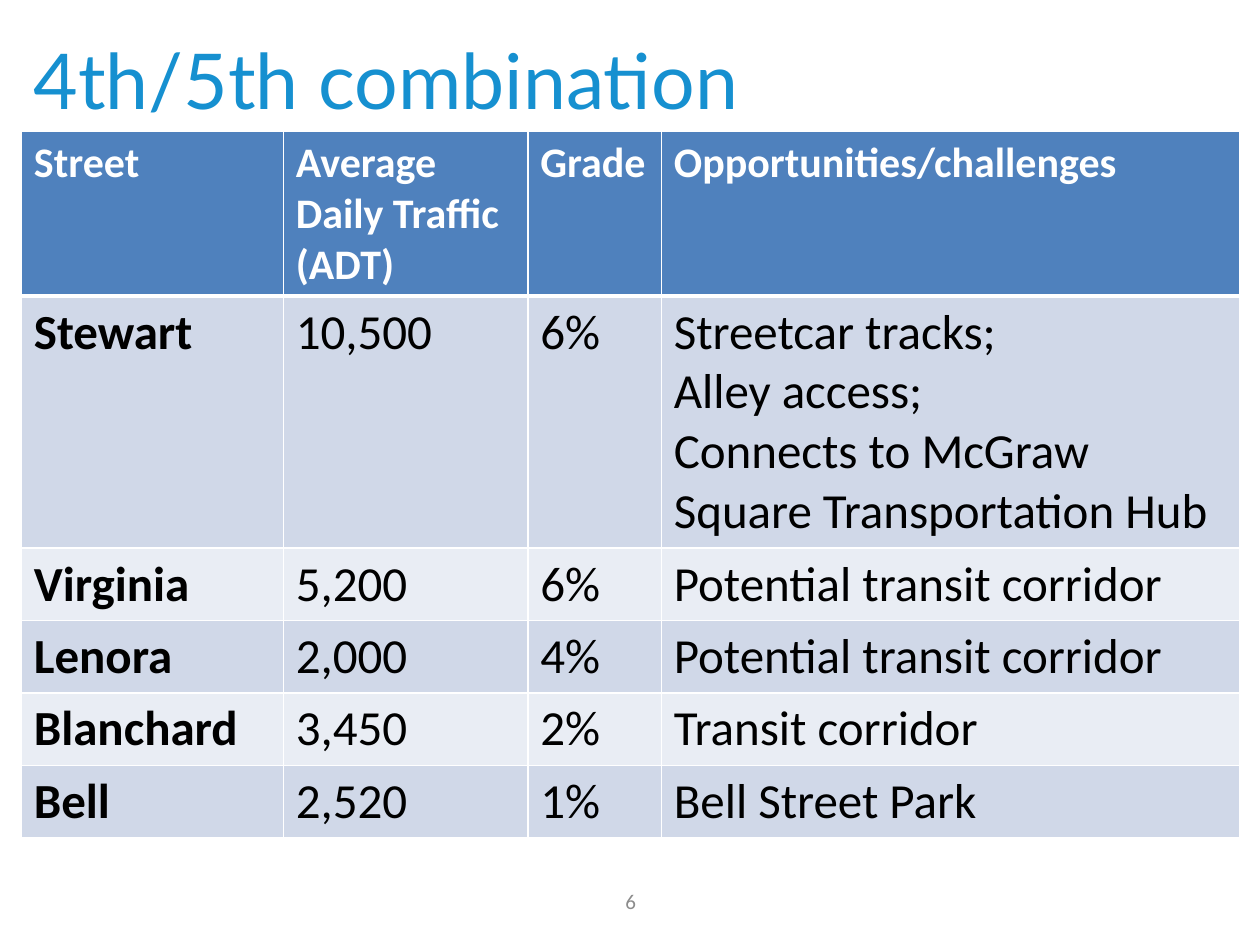
from lxml.etree import SubElement
from pptx import Presentation
from pptx.dml.color import RGBColor as Color
from pptx.enum.text import MSO_ANCHOR as Anchor, PP_ALIGN as Align
from pptx.oxml.ns import qn
from pptx.util import Cm, Pt

COLORS = {
    "title": "1690D0",
    "header": "4F81BD",
    "band_dark": "D0D8E8",
    "band_light": "E9EDF4",
    "white": "FFFFFF",
    "text": "000000",
    "number": "8C8C8C",
}
COLUMN_WIDTHS = [5.28, 4.93, 2.69, 11.66]
ROW_HEIGHTS = [3.33, 5.08] + [1.46] * 4
STREETS = [
    ["Street", "Average Daily Traffic (ADT)", "Grade", "Opportunities/challenges"],
    ["Stewart", "10,500", "6%",
     "Streetcar tracks;\nAlley access;\nConnects to McGraw Square Transportation Hub"],
    ["Virginia", "5,200", "6%", "Potential transit corridor"],
    ["Lenora", "2,000", "4%", "Potential transit corridor"],
    ["Blanchard", "3,450", "2%", "Transit corridor"],
    ["Bell", "2,520", "1%", "Bell Street Park"],
]


def style_text(frame, size, color, name="Calibri", bold=False, align=None):
    for para in frame.paragraphs:
        para.alignment = align
        para.font.size = Pt(size)
        para.font.name = name
        para.font.bold = bold
        para.font.color.rgb = Color.from_string(COLORS[color])


def add_text(page, text, left, top, width, height, **style):
    box = page.shapes.add_textbox(Cm(left), Cm(top), Cm(width), Cm(height))
    frame = box.text_frame
    frame.word_wrap = True
    frame.vertical_anchor = Anchor.MIDDLE
    frame.text = text
    style_text(frame, **style)


def add_borders(cell, top, bottom):
    properties = cell._tc.get_or_add_tcPr()
    for side, width in {"L": 1, "R": 1, "T": top, "B": bottom}.items():
        line = SubElement(properties, qn(f"a:ln{side}"), w=str(Pt(width)))
        fill = SubElement(line, qn("a:solidFill"))
        SubElement(fill, qn("a:srgbClr"), val=COLORS["white"])


def fill_cell(cell, text, row, column):
    is_header = row == 0
    # Borders come before the fill in the cell properties
    add_borders(cell, top=3 if row == 1 else 1, bottom=3 if is_header else 1)
    band = "header" if is_header else "band_dark" if row % 2 else "band_light"
    cell.fill.solid()
    cell.fill.fore_color.rgb = Color.from_string(COLORS[band])
    cell.text = text
    style_text(cell.text_frame, size=24 if is_header else 28,
               color="white" if is_header else "text",
               bold=is_header or column == 0)


def add_street_table(page, left, top):
    table = page.shapes.add_table(
        len(STREETS), len(COLUMN_WIDTHS), Cm(left), Cm(top),
        Cm(sum(COLUMN_WIDTHS)), Cm(sum(ROW_HEIGHTS))).table
    for column, width in zip(table.columns, COLUMN_WIDTHS):
        column.width = Cm(width)
    for row, height in zip(table.rows, ROW_HEIGHTS):
        row.height = Cm(height)
    for row, texts in enumerate(STREETS):
        for column, text in enumerate(texts):
            fill_cell(table.cell(row, column), text, row, column)


def main():
    deck = Presentation()
    deck.slide_width, deck.slide_height = Cm(25.4), Cm(19.05)
    page = deck.slides.add_slide(deck.slide_layouts[6])

    # Title
    add_text(page, "4th/5th combination", 0.43, 0, 23.47, 3.18,
             size=44, color="title", name="Lato")
    # Streets compared
    add_street_table(page, 0.43, 2.64)
    # Page number
    add_text(page, "6", 8.69, 17.65, 8.05, 1.02,
             size=12, color="number", align=Align.CENTER)

    deck.save("out.pptx")


if __name__ == "__main__":
    main()
